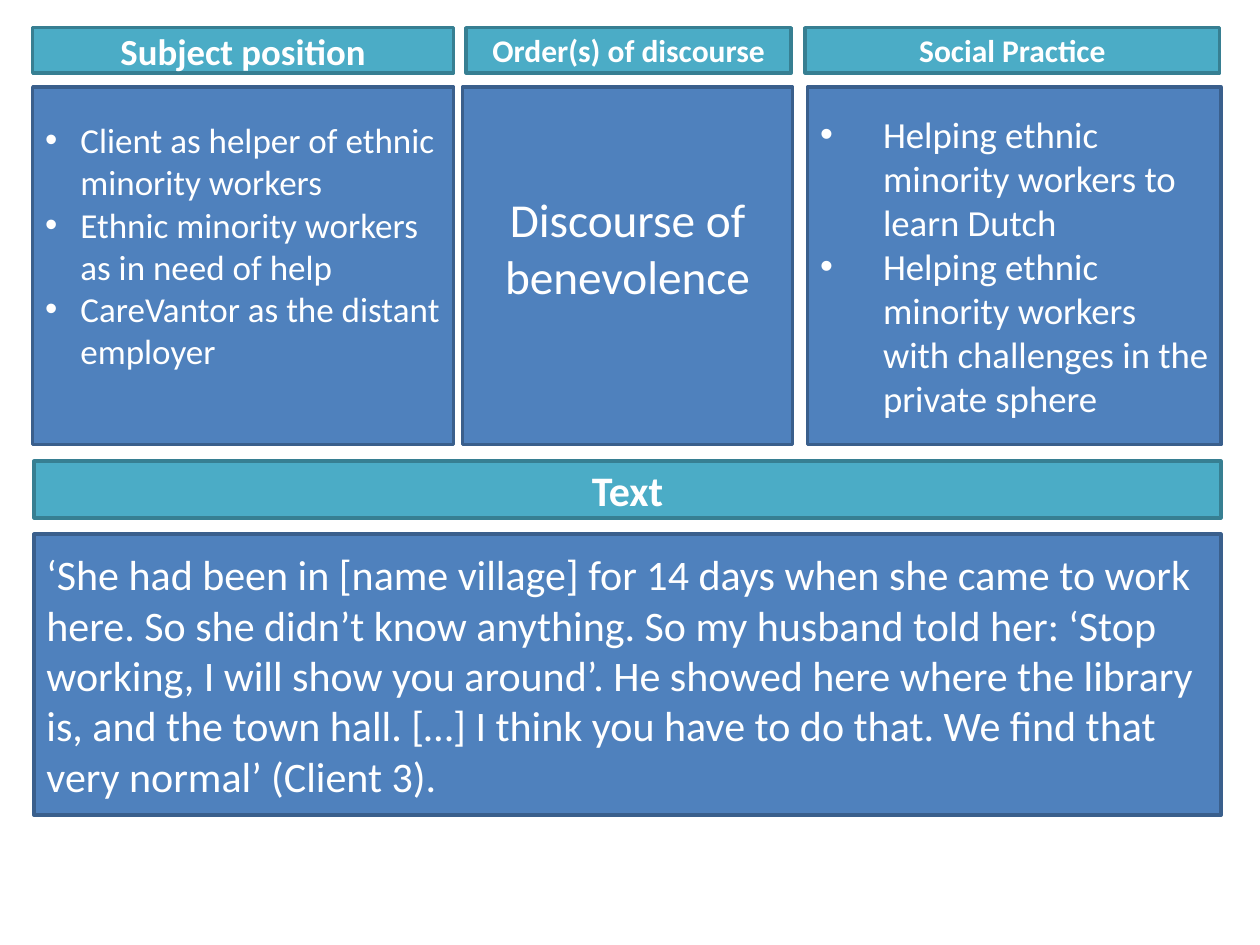
from pptx import Presentation
from pptx.dml.color import RGBColor
from pptx.enum.shapes import MSO_SHAPE as Shape
from pptx.enum.text import MSO_ANCHOR as Anchor, PP_ALIGN as Align
from pptx.oxml.ns import qn
from pptx.util import Inches, Pt
from lxml.etree import SubElement

# Content
COLUMNS = [
    dict(heading="Subject position", heading_size=21, heading_span=(0.26, 3.34),
         body=["Client as helper of ethnic minority workers",
               "Ethnic minority workers as in need of help",
               "CareVantor as the distant employer"],
         body_size=20, body_span=(0.26, 3.34), indent=0.28, bottom_inset=0.38),
    dict(heading="Order(s) of discourse", heading_size=18, heading_span=(3.7, 2.58),
         body=["Discourse of benevolence"],
         body_size=27, body_span=(3.67, 2.62), align=Align.CENTER, bottom_inset=0.35),
    dict(heading="Social Practice", heading_size=18, heading_span=(6.39, 3.29),
         body=["Helping ethnic minority workers to learn Dutch",
               "Helping ethnic minority workers with challenges in the private sphere"],
         body_size=21, body_span=(6.41, 3.28), indent=0.5),
]
QUOTE_HEADING = "Text"
QUOTE = ("‘She had been in [name village] for 14 days when she came to work here. "
         "So she didn’t know anything. So my husband told her: ‘Stop working, I will "
         "show you around’. He showed here where the library is, and the town hall. "
         "[…] I think you have to do that. We find that very normal’ (Client 3).")

# Theme and rows (top, height)
THEME = dict(font="Calibri", text="FFFFFF", quote_size=24, line_width=2,
             heading=("4BACC6", "377F92"), body=("4F81BD", "3A5F8C"))
HEADING_ROW, BODY_ROW = (0.22, 0.36), (0.69, 2.84)
QUOTE_HEADING_ROW, QUOTE_ROW = (3.66, 0.45), (4.24, 2.23)
QUOTE_SPAN = (0.27, 9.42)


def add_bullet(paragraph, indent):
    props = paragraph._p.get_or_add_pPr()
    props.set("marL", str(Inches(indent)))
    props.set("indent", str(-Inches(indent)))
    SubElement(props, qn("a:buFont")).set("typeface", "Arial")
    SubElement(props, qn("a:buChar")).set("char", "•")


def add_panel(slide, role, span, row, lines, size, align=Align.LEFT,
              indent=None, bottom_inset=0.05):
    (left, width), (top, height) = span, row
    panel = slide.shapes.add_shape(Shape.RECTANGLE, Inches(left), Inches(top),
                                   Inches(width), Inches(height))
    fill, line = THEME[role]
    panel.shadow.inherit = False
    panel.fill.solid()
    panel.fill.fore_color.rgb = RGBColor.from_string(fill)
    panel.line.color.rgb = RGBColor.from_string(line)
    panel.line.width = Pt(THEME["line_width"])

    frame = panel.text_frame
    frame.word_wrap = True
    frame.vertical_anchor = Anchor.MIDDLE
    frame.margin_bottom = Inches(bottom_inset)
    for number, line_text in enumerate(lines):
        paragraph = frame.add_paragraph() if number else frame.paragraphs[0]
        paragraph.text = line_text
        paragraph.alignment = align
        if indent:
            add_bullet(paragraph, indent)
        font = paragraph.font
        font.name, font.size, font.bold = THEME["font"], Pt(size), role == "heading"
        font.color.rgb = RGBColor.from_string(THEME["text"])


presentation = Presentation()
presentation.slide_width, presentation.slide_height = Inches(10), Inches(7.5)
slide = presentation.slides.add_slide(presentation.slide_layouts[6])

# Three columns: heading above body
for column in COLUMNS:
    add_panel(slide, "body", column["body_span"], BODY_ROW, column["body"],
              column["body_size"], column.get("align", Align.LEFT),
              column.get("indent"), column.get("bottom_inset", 0.05))
    add_panel(slide, "heading", column["heading_span"], HEADING_ROW,
              [column["heading"]], column["heading_size"], Align.CENTER)

# Interview quote across the full width
add_panel(slide, "body", QUOTE_SPAN, QUOTE_ROW, [QUOTE], THEME["quote_size"])
add_panel(slide, "heading", QUOTE_SPAN, QUOTE_HEADING_ROW, [QUOTE_HEADING],
          THEME["quote_size"], Align.CENTER)

presentation.save("out.pptx")
